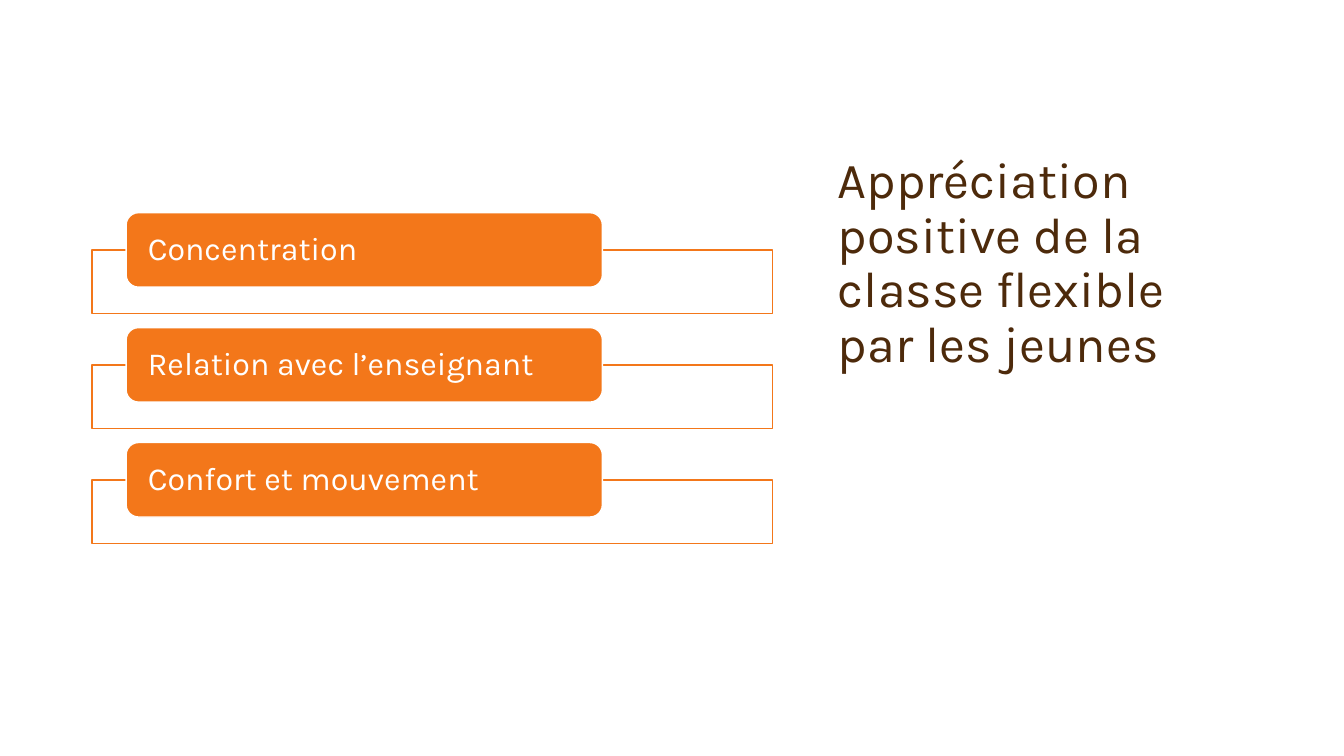
from pptx import Presentation
from pptx.dml.color import RGBColor as RGB
from pptx.enum.shapes import MSO_SHAPE as Shape
from pptx.enum.text import MSO_ANCHOR as Anchor, PP_ALIGN as Align
from pptx.oxml.ns import qn
from pptx.util import Pt
from lxml.etree import SubElement as Sub

COLORS = {"orange": "F3771A", "white": "FFFFFF", "brown": "4D2A0B"}
FONT = "Karla"
TITLE = "Appréciation positive de la classe flexible par les jeunes"
THEMES = ["Concentration", "Relation avec l’enseignant", "Confort et mouvement"]


def color(name):
    """Return the named colour."""
    return RGB.from_string(COLORS[name])


def write(frame, text, size, tint, anchor):
    """Write one left-aligned run into a text frame."""
    frame.word_wrap = True
    frame.vertical_anchor = anchor
    para = frame.paragraphs[0]
    para.alignment = Align.LEFT
    para.line_spacing = 0.9
    run = para.add_run()
    run.text = text
    run.font.name = FONT
    run.font.size = Pt(size)
    run.font.color.rgb = color(tint)


def add_box(slide, kind, box, fill, line):
    """Add a filled and outlined shape in the given box."""
    shape = slide.shapes.add_shape(kind, *map(Pt, box))
    shape.shadow.inherit = False
    shape.fill.solid()
    shape.fill.fore_color.rgb = color(fill)
    shape.line.color.rgb = color(line)
    shape.line.width = Pt(1)
    return shape


def add_title(slide, box):
    """Place the title at the bottom of its box."""
    frame = slide.shapes.add_textbox(*map(Pt, box)).text_frame
    write(frame, TITLE, 36, "brown", Anchor.BOTTOM)


def add_theme(slide, text, left, top, width):
    """Place an open frame with a label pill over its top edge."""
    frame = add_box(slide, Shape.RECTANGLE, (left, top + 26.7, width, 45.4),
                    "white", "orange")
    tint = frame.fill._xPr.find(qn("a:solidFill"))[0]
    Sub(tint, qn("a:alpha"), val="90000")
    pill = add_box(slide, Shape.ROUNDED_RECTANGLE,
                   (left + width * 0.05, top, width * 0.7, 53.2),
                   "orange", "white")
    label = pill.text_frame
    label.margin_left = label.margin_right = Pt(12.9)
    label.margin_top = label.margin_bottom = 0
    write(label, text, 23, "white", Anchor.MIDDLE)


def add_list(slide, left, top, width, pitch):
    """Stack the themes at an equal pitch."""
    for row, text in enumerate(THEMES):
        add_theme(slide, text, left, top + row * pitch, width)


def main():
    """Build and save the slide."""
    deck = Presentation()
    deck.slide_width, deck.slide_height = Pt(960), Pt(540)
    slide = deck.slides.add_slide(deck.slide_layouts[6])
    add_title(slide, (591.5, 104.4, 302.4, 165.6))
    add_list(slide, 65.8, 151.9, 486, 82.1)
    deck.save("out.pptx")


if __name__ == "__main__":
    main()
